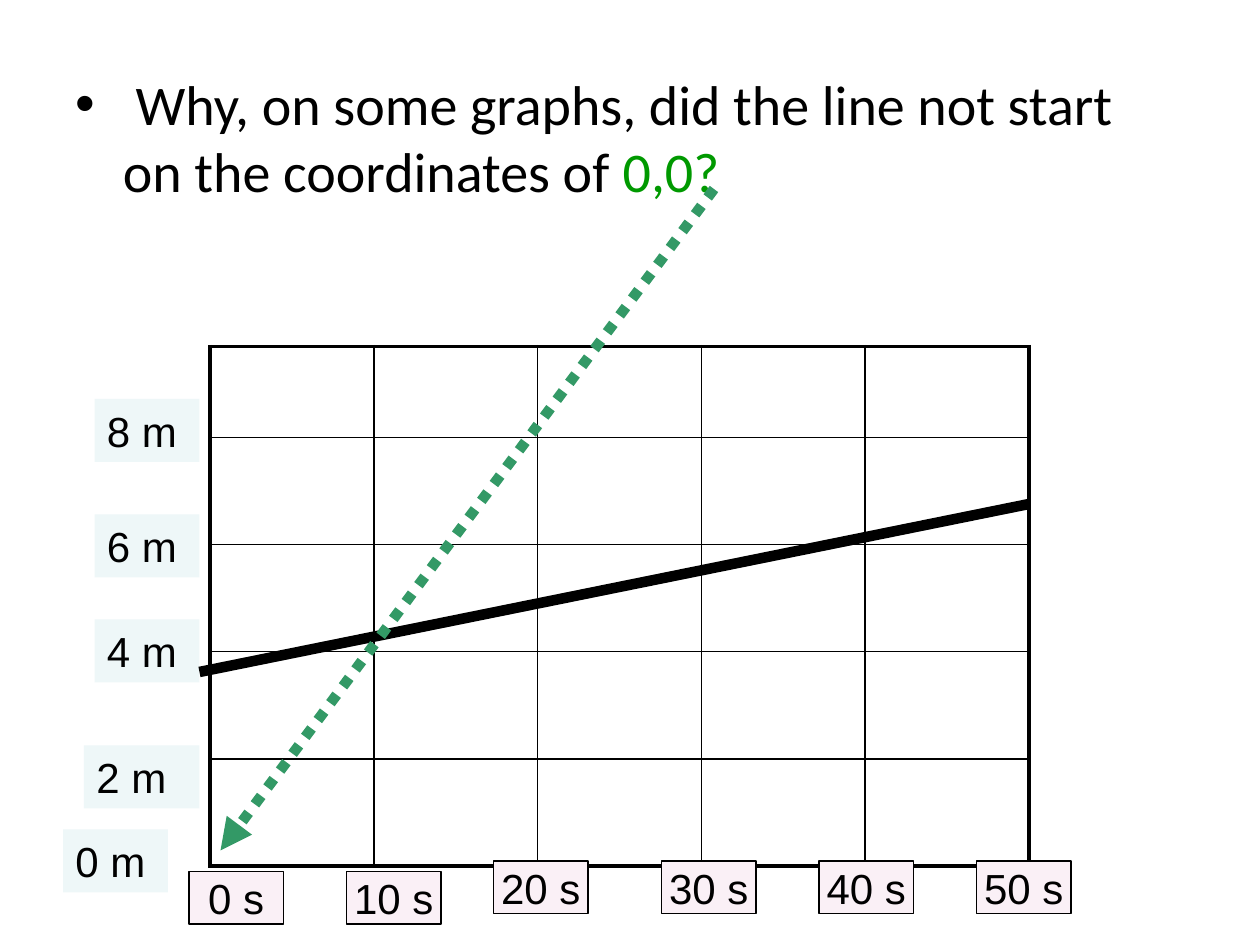
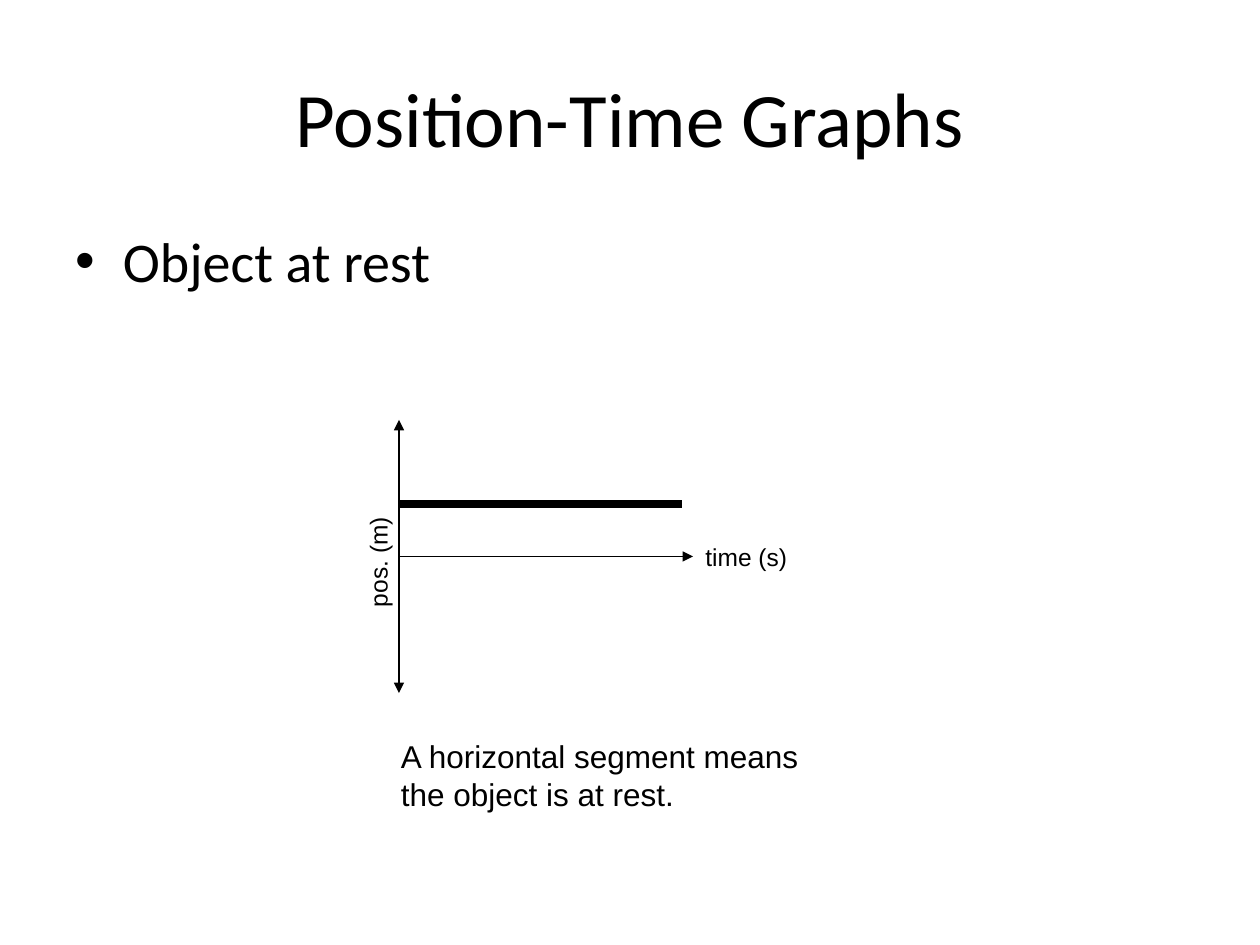
import pptx
import pptx.util
import pptx.dml.color
import pptx.enum.dml
import pptx.enum.shapes
import pptx.enum.text
import pptx.oxml
import pptx.oxml.ns

Pt = pptx.util.Pt
RGBColor = pptx.dml.color.RGBColor
PP_ALIGN = pptx.enum.text.PP_ALIGN
MSO_ANCHOR = pptx.enum.text.MSO_ANCHOR
MSO_AUTO_SIZE = pptx.enum.text.MSO_AUTO_SIZE
NSDECLS = pptx.oxml.ns.nsdecls("a")

BLACK = RGBColor(0x00, 0x00, 0x00)
GREEN = RGBColor(0x00, 0x99, 0x00)
ARROW_GREEN = RGBColor(0x33, 0x99, 0x66)
DISTANCE_FILL = RGBColor(0xEE, 0xF7, 0xF8)
TIME_FILL = RGBColor(0xFA, 0xF0, 0xF6)
HEADING_FONT, LABEL_FONT = "Calibri", "Arial"


def format_run(r, font, size, color=BLACK):
    r.font.name = font
    r.font.size = Pt(size)
    r.font.color.rgb = color


def place(sp, box):
    sp.left, sp.top, sp.width, sp.height = map(Pt, box)


def add_slide(prs, title, title_box, body_runs, body_box):
    slide = prs.slides.add_slide(prs.slide_layouts[1])
    heading, body = slide.shapes.title, slide.placeholders[1]
    if title:
        place(heading, title_box)
        heading.text_frame.text = title
        p = heading.text_frame.paragraphs[0]
        p.alignment = PP_ALIGN.CENTER
        format_run(p.runs[0], HEADING_FONT, 44)
    else:
        heading.element.getparent().remove(heading.element)
    place(body, body_box)
    p = body.text_frame.paragraphs[0]
    for text, color in body_runs:
        r = p.add_run()
        r.text = text
        format_run(r, HEADING_FONT, 32, color)
    return slide


def add_line(slide, start, end, width, color=BLACK, head=False, tail=False):
    line = slide.shapes.add_connector(
        pptx.enum.shapes.MSO_CONNECTOR.STRAIGHT, *map(Pt, start + end))
    line.line.color.rgb = color
    line.line.width = Pt(width)
    ln = line.line._get_or_add_ln()
    for tag, wanted in (("headEnd", head), ("tailEnd", tail)):
        if wanted:
            ln.append(pptx.oxml.parse_xml(f'<a:{tag} {NSDECLS} type="triangle"/>'))
    line.element.spPr.append(pptx.oxml.parse_xml(f"<a:effectLst {NSDECLS}/>"))
    return line


def add_text(slide, text, box, size):
    sp = slide.shapes.add_textbox(*map(Pt, box))
    tf = sp.text_frame
    tf.text = text
    tf.word_wrap = True
    tf.auto_size = MSO_AUTO_SIZE.SHAPE_TO_FIT_TEXT
    format_run(tf.paragraphs[0].runs[0], LABEL_FONT, size)
    return sp


def add_label(slide, text, box, fill, boxed):
    sp = slide.shapes.add_shape(
        pptx.enum.shapes.MSO_SHAPE.RECTANGLE, *map(Pt, box))
    sp.shadow.inherit = False
    sp.fill.solid()
    sp.fill.fore_color.rgb = fill
    tf = sp.text_frame
    tf.text = text
    p = tf.paragraphs[0]
    format_run(p.runs[0], LABEL_FONT, 24)
    if boxed:
        sp.line.color.rgb = BLACK
        sp.line.width = Pt(0.75)
        tf.word_wrap = False
        tf.vertical_anchor = MSO_ANCHOR.MIDDLE
        p.alignment = PP_ALIGN.CENTER
    else:
        sp.line.fill.background()
        tf.word_wrap = True
        tf.auto_size = MSO_AUTO_SIZE.SHAPE_TO_FIT_TEXT
        tf.vertical_anchor = MSO_ANCHOR.TOP
        p.alignment = PP_ALIGN.LEFT


def set_borders(cell, widths):
    tcPr = cell._tc.get_or_add_tcPr()
    for i, (side, width) in enumerate(zip("LRTB", widths)):
        tcPr.insert(i, pptx.oxml.parse_xml(
            f'<a:ln{side} {NSDECLS} w="{Pt(width)}"><a:solidFill>'
            f'<a:srgbClr val="{BLACK}"/></a:solidFill></a:ln{side}>'))


def add_grid(slide, box, cols, heights):
    table = slide.shapes.add_table(len(heights), cols, *map(Pt, box)).table
    table.first_row = table.horz_banding = False
    for col in table.columns:
        col.width = Pt(box[2] / cols)
    last_row, last_col = len(heights) - 1, cols - 1
    for i, height in enumerate(heights):
        table.rows[i].height = Pt(height)
        for j in range(cols):
            cell = table.cell(i, j)
            cell.fill.background()
            outer = (j == 0, j == last_col, i == 0, i == last_row)
            set_borders(cell, [2.25 if edge else 1 for edge in outer])


def add_motion_graph(slide, box):
    x, y, w, h = box
    add_grid(slide, box, 5, [52] + [(h - 52) / 4] * 4)
    distances = [("8 m", -66, 30, 60), ("6 m", -66, 96, 60), ("4 m", -66, 156, 60),
                 ("2 m", -72, 228, 66), ("0 m", -84, 276, 60)]
    for text, dx, dy, width in distances:
        add_label(slide, text, (x + dx, y + dy, width, 36), DISTANCE_FILL, False)
    times = [(-12, 300), (78, 300), (162, 294), (258, 294), (348, 294), (438, 294)]
    for i, (dx, dy) in enumerate(times):
        add_label(slide, f"{10 * i} s", (x + dx, y + dy, 54, 30), TIME_FILL, True)
    add_line(slide, (x - 6, y + 186), (x + w, y + 90), 6)
    pointer = add_line(slide, (x + 288, y - 90), (x + 6, y + 288), 6, ARROW_GREEN, tail=True)
    pointer.line.dash_style = pptx.enum.dml.MSO_LINE.ROUND_DOT


def add_rest_graph(slide, box):
    x, y, w, h = box
    mid = y + h / 2
    add_line(slide, (x, y), (x, y + h), 0.75, head=True, tail=True)
    time_label = add_text(slide, "time (s)", (x + w, mid - 12, 66, 24), 14)
    time_axis = add_line(slide, (x, mid), (x + w, mid), 0.75, tail=True)
    time_axis.end_connect(time_label, 1)
    position_label = add_text(slide, "pos. (m)", (x - 45, mid - 9, 66, 24), 14)
    position_label.rotation = 270
    add_line(slide, (x, y + 48), (x + w - 6, y + 48), 4.5)
    add_text(slide, "A horizontal segment means the object is at rest.",
             (x - 6, y + h + 21.6, 246, 50.4), 18)


def main():
    prs = pptx.Presentation()
    prs.slide_width, prs.slide_height = Pt(720), Pt(540)
    question = [(" Why, on some graphs, did the line not start on the coordinates of ", BLACK),
                ("0,0?", GREEN)]
    slide = add_slide(prs, None, None, question, (36, 36, 648, 446.4))
    add_motion_graph(slide, (120, 198, 468, 296.8))
    slide = add_slide(prs, "Position-Time Graphs", (36, 21.6, 648, 90),
                      [("Object at rest", BLACK)], (36, 126, 648, 356.4))
    add_rest_graph(slide, (228, 240, 168, 156))
    prs.save("out.pptx")


if __name__ == "__main__":
    main()
